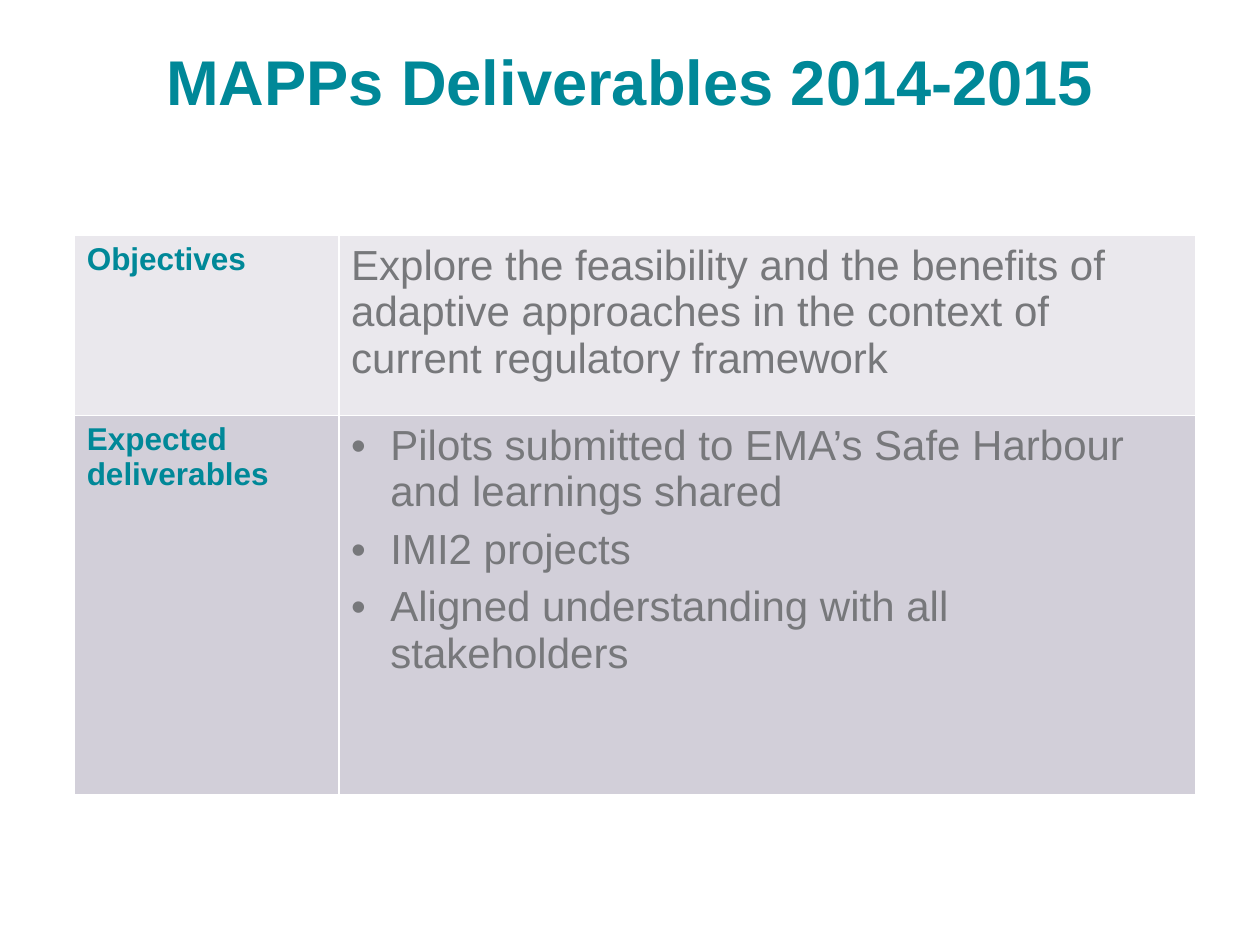
"""Build the MAPPs deliverables slide with its two-row table."""
from dataclasses import dataclass

from lxml import etree
from pptx import Presentation
from pptx import util as u
from pptx.dml.color import RGBColor
from pptx.enum import text
from pptx.oxml.ns import qn

TITLE = "MAPPs Deliverables 2014-2015"
ROWS = [
    {
        "label": "Objectives",
        "items": [
            "Explore the feasibility and the benefits of adaptive approaches "
            "in the context of current regulatory framework",
        ],
        "bulleted": False,
        "height": 3.63,
        "fill": "EAE8ED",
    },
    {
        "label": "Expected deliverables",
        "items": [
            "Pilots submitted to EMA’s Safe Harbour and learnings shared",
            "IMI2 projects",
            "Aligned understanding with all stakeholders",
        ],
        "bulleted": True,
        "height": 7.65,
        "fill": "D2CFD9",
    },
]
COLUMN_WIDTHS = [5.33, 17.27]


@dataclass(frozen=True)
class Theme:
    font: str = "Arial"
    accent: str = "008898"
    body: str = "77787B"
    border: str = "FFFFFF"
    title_size: float = 36.1
    label_size: int = 18
    body_size: int = 24


THEME = Theme()


def format_runs(paragraph, size, color, bold):
    for run in paragraph.runs:
        run.font.name = THEME.font
        run.font.size = u.Pt(size)
        run.font.bold = bold
        run.font.color.rgb = RGBColor.from_string(color)


def add_bullet(paragraph):
    indent = u.Cm(0.79)
    paragraph.space_after = u.Pt(6)
    properties = paragraph._p.get_or_add_pPr()
    properties.set("marL", str(indent))
    properties.set("indent", str(-indent))
    etree.SubElement(properties, qn("a:buFont"), typeface=THEME.font)
    etree.SubElement(properties, qn("a:buChar"), char="•")


def style_cell(cell, fill):
    properties = cell._tc.get_or_add_tcPr()
    for side in ("lnL", "lnR", "lnT", "lnB"):
        line = etree.SubElement(properties, qn(f"a:{side}"), w=str(u.Pt(1)))
        solid = etree.SubElement(line, qn("a:solidFill"))
        etree.SubElement(solid, qn("a:srgbClr"), val=THEME.border)
    cell.fill.solid()
    cell.fill.fore_color.rgb = RGBColor.from_string(fill)
    cell.margin_left = cell.margin_right = u.Cm(0.25)
    cell.margin_top = cell.margin_bottom = u.Cm(0.13)


def fill_cell(cell, items, size, color, bold, bulleted=False):
    cell.text_frame.text = "\n".join(items)
    for paragraph in cell.text_frame.paragraphs:
        if bulleted:
            add_bullet(paragraph)
        format_runs(paragraph, size, color, bold)


def add_title(slide):
    shape = slide.shapes.add_textbox(u.Cm(0), u.Cm(0.71), u.Cm(25.4), u.Cm(7.29))
    frame = shape.text_frame
    frame.word_wrap = True
    frame.margin_left = frame.margin_right = frame.margin_bottom = u.Cm(0)
    frame.margin_top = u.Cm(0.15)
    frame.text = TITLE
    paragraph = frame.paragraphs[0]
    paragraph.alignment = text.PP_ALIGN.CENTER
    format_runs(paragraph, THEME.title_size, THEME.accent, True)


def add_deliverables(slide):
    height = sum(row["height"] for row in ROWS)
    shape = slide.shapes.add_table(
        len(ROWS), len(COLUMN_WIDTHS),
        u.Cm(1.5), u.Cm(4.75), u.Cm(sum(COLUMN_WIDTHS)), u.Cm(height),
    )
    table = shape.table
    table.first_row = table.horz_banding = False
    for column, width in zip(table.columns, COLUMN_WIDTHS):
        column.width = u.Cm(width)
    for table_row, row in zip(table.rows, ROWS):
        table_row.height = u.Cm(row["height"])
        label, body = table_row.cells
        for cell in (label, body):
            style_cell(cell, row["fill"])
        fill_cell(label, [row["label"]], THEME.label_size, THEME.accent, True)
        fill_cell(body, row["items"], THEME.body_size, THEME.body, False, row["bulleted"])


def main():
    presentation = Presentation()
    presentation.slide_width = u.Cm(25.4)
    presentation.slide_height = u.Cm(19.05)
    slide = presentation.slides.add_slide(presentation.slide_layouts[6])
    add_title(slide)
    add_deliverables(slide)
    presentation.save("out.pptx")


if __name__ == "__main__":
    main()
